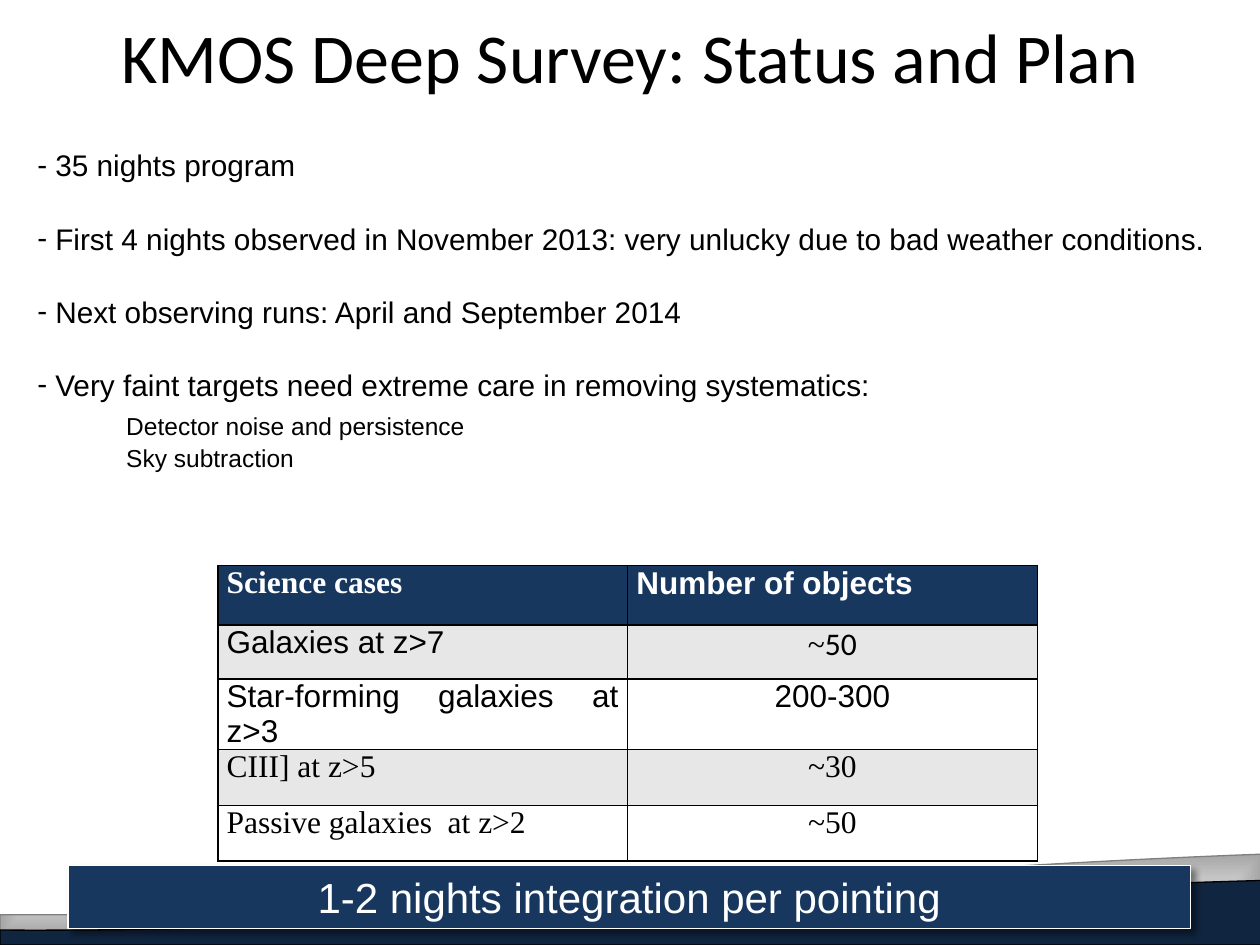
from dataclasses import dataclass

from lxml.etree import SubElement
from pptx import Presentation
from pptx.dml.color import RGBColor
from pptx.enum.shapes import MSO_SHAPE as Preset
from pptx.enum.text import MSO_ANCHOR as Anchor, MSO_AUTO_SIZE as AutoSize, PP_ALIGN as Align
from pptx.oxml.ns import qn
from pptx.util import Cm, Pt

NAVY, WHITE, BLACK, BAND = "17375E", "FFFFFF", "000000", "E7E7E7"
ARIAL, CALIBRI, TIMES = "Arial", "Calibri", "Times New Roman"
Point = tuple[float, float]


@dataclass
class Shadow:
    color: str
    opacity: int
    blur: float
    distance: float
    angle: int


@dataclass
class Wave:
    """Band at the slide foot: a curved upper edge above a flat base, in cm."""
    edge: tuple[Point, Point, Point, Point]
    base: float
    fills: tuple[str, ...]
    line: str


@dataclass
class ListItem:
    text: str
    space_before: float
    level: int = 0


@dataclass
class ScienceCase:
    label: str
    label_font: str
    label_align: Align
    count: tuple[tuple[str, str], ...]  # (text, font) runs
    count_align: Align = Align.CENTER


WAVE_SHADOW = Shadow("808080", 35, 3.1, 1.8, 90)
BAR_SHADOW = Shadow("000000", 43, 4, 3, 45)
WAVES = [
    Wave(((0, 18.44), (8.59, 18.49), (16.94, 17.53), (25.43, 17.22)), 18.85,
         ("DCDCDC", "A6A6A6"), "7F7F7F"),
    Wave(((0, 18.75), (8.59, 18.8), (16.94, 17.98), (25.43, 17.75)), 19.05,
         ("10253F",), BLACK),
]
ITEMS = [
    ListItem("35 nights program", 0),
    ListItem("First 4 nights observed in November 2013: very unlucky due to bad "
             "weather conditions.", 21.4),
    ListItem("Next observing runs: April and September 2014", 21.4),
    ListItem("Very faint targets need extreme care in removing systematics:", 21.4),
    ListItem("Detector noise and persistence", 5, level=1),
    ListItem("Sky subtraction", 1.5, level=1),
]
CASES = [
    ScienceCase("Science cases", TIMES, Align.LEFT,
                (("Number of objects", ARIAL),), Align.JUSTIFY),
    ScienceCase("Galaxies at z>7", ARIAL, Align.JUSTIFY, (("~", TIMES), ("50", CALIBRI))),
    ScienceCase("Star-forming galaxies at z>3", ARIAL, Align.JUSTIFY, (("200-300", ARIAL),)),
    ScienceCase("CIII] at z>5", TIMES, Align.JUSTIFY, (("~30", TIMES),)),
    ScienceCase("Passive galaxies  at z>2", TIMES, Align.JUSTIFY, (("~50", TIMES),)),
]
ROW_HEIGHTS = (1.2, 1.09, 1.12, 1.12, 1.12)


def rgb(color: str) -> RGBColor:
    return RGBColor.from_string(color)


def add_text(paragraph, text: str, *, size: float, font: str = ARIAL,
             color: str = BLACK, bold: bool = False, align: Align = Align.LEFT) -> None:
    paragraph.alignment = align
    run = paragraph.add_run()
    run.text = text
    run.font.size, run.font.name, run.font.bold = Pt(size), font, bold
    run.font.color.rgb = rgb(color)


def place(shape, left: float, top: float, width: float, height: float) -> None:
    shape.left, shape.top = Cm(left), Cm(top)
    shape.width, shape.height = Cm(width), Cm(height)


def set_solid(target, color: str) -> None:
    target.fill.solid()
    target.fill.fore_color.rgb = rgb(color)


def set_line(shape, color: str) -> None:
    shape.line.color.rgb = rgb(color)
    shape.line.width = Pt(0.75)


def set_shadow(shape, shadow: Shadow) -> None:
    shape.shadow.inherit = False
    effects = shape.element.spPr.find(qn("a:effectLst"))
    outer = SubElement(effects, qn("a:outerShdw"), blurRad=str(Pt(shadow.blur)),
                       dist=str(Pt(shadow.distance)), dir=str(shadow.angle * 60000),
                       rotWithShape="0")
    color = SubElement(outer, qn("a:srgbClr"), val=shadow.color)
    SubElement(color, qn("a:alpha"), val=str(shadow.opacity * 1000))


def set_rect_gradient(shape, colors: tuple[str, ...]) -> None:
    """Fill from the centre outwards."""
    shape.fill.gradient()
    for stop, color in zip(shape.fill.gradient_stops, colors):
        stop.color.rgb = rgb(color)
    gradient = shape.element.spPr.find(qn("a:gradFill"))
    gradient.remove(gradient.find(qn("a:lin")))
    rect = SubElement(gradient, qn("a:path"), path="rect")
    SubElement(rect, qn("a:fillToRect"), l="50000", t="50000", r="50000", b="50000")


def bezier(edge: tuple[Point, Point, Point, Point], steps: int = 40) -> list[Point]:
    points = []
    for step in range(steps + 1):
        t = step / steps
        weights = ((1 - t) ** 3, 3 * t * (1 - t) ** 2, 3 * t * t * (1 - t), t ** 3)
        points.append((sum(w * x for w, (x, _) in zip(weights, edge)),
                       sum(w * y for w, (_, y) in zip(weights, edge))))
    return points


def draw_wave(slide, wave: Wave) -> None:
    """Draw the band behind the title and everything after it."""
    points = [*bezier(wave.edge), (wave.edge[-1][0], wave.base), (0, wave.base)]
    start, *rest = [(Cm(x), Cm(y)) for x, y in points]
    builder = slide.shapes.build_freeform(*start)
    builder.add_line_segments(rest, close=True)
    shape = builder.convert_to_shape()
    if len(wave.fills) > 1:
        set_rect_gradient(shape, wave.fills)
    else:
        set_solid(shape, wave.fills[0])
    set_line(shape, wave.line)
    set_shadow(shape, WAVE_SHADOW)
    slide.shapes.title.element.addprevious(shape.element)


def draw_list(body, items: list[ListItem]) -> None:
    frame = body.text_frame
    frame.auto_size = AutoSize.NONE
    for index, item in enumerate(items):
        paragraph = frame.add_paragraph() if index else frame.paragraphs[0]
        paragraph.level = item.level
        paragraph.space_before = Pt(item.space_before)
        add_text(paragraph, item.text, size=14 if item.level else 17)
        margin, indent = (2.29, 0) if item.level else (0.86, -0.36)
        properties = paragraph._p.get_or_add_pPr()
        properties.set("marL", str(Cm(margin)))
        properties.set("indent", str(Cm(indent)))
        if item.level:
            SubElement(properties, qn("a:buNone"))
        else:
            SubElement(properties, qn("a:buFont"), typeface=ARIAL)
            SubElement(properties, qn("a:buChar"), char="-")


def format_cell(cell, fill: str) -> None:
    cell.margin_left = cell.margin_right = Cm(0.18)
    cell.margin_top = cell.margin_bottom = 0
    for side in ("lnL", "lnR", "lnT", "lnB"):
        border = SubElement(cell._tc.get_or_add_tcPr(), qn(f"a:{side}"), w=str(Pt(1)))
        SubElement(SubElement(border, qn("a:solidFill")), qn("a:srgbClr"), val=BLACK)
    set_solid(cell, fill)


def draw_table(slide, cases: list[ScienceCase]) -> None:
    table = slide.shapes.add_table(len(cases), 2, Cm(4.39), Cm(11.4), Cm(16.52),
                                   Cm(sum(ROW_HEIGHTS))).table
    for index, (case, height) in enumerate(zip(cases, ROW_HEIGHTS)):
        table.rows[index].height = Cm(height)
        header = index == 0
        fill = NAVY if header else BAND if index % 2 else WHITE
        columns = ((((case.label, case.label_font),), case.label_align),
                   (case.count, case.count_align))
        for column, (runs, align) in enumerate(columns):
            cell = table.cell(index, column)
            format_cell(cell, fill)
            for text, font in runs:
                add_text(cell.text_frame.paragraphs[0], text, size=18, font=font, bold=header,
                         color=WHITE if header else BLACK, align=align)


def draw_bar(slide, text: str) -> None:
    bar = slide.shapes.add_shape(Preset.RECTANGLE, Cm(1.37), Cm(17.45), Cm(22.63), Cm(1.27))
    set_solid(bar, NAVY)
    set_line(bar, WHITE)
    set_shadow(bar, BAR_SHADOW)
    bar.text_frame.word_wrap = True
    bar.text_frame.vertical_anchor = Anchor.MIDDLE
    add_text(bar.text_frame.paragraphs[0], text, size=24, color=WHITE, align=Align.CENTER)


def main() -> None:
    presentation = Presentation()
    presentation.slide_width, presentation.slide_height = Cm(25.4), Cm(19.05)
    slide = presentation.slides.add_slide(presentation.slide_layouts[1])
    title, body = slide.placeholders
    place(title, 1.7, 0.03, 22, 2.18)
    title.text_frame.vertical_anchor = Anchor.MIDDLE
    add_text(title.text_frame.paragraphs[0], "KMOS Deep Survey: Status and Plan",
             size=40, font=CALIBRI, align=Align.CENTER)
    place(body, 0, 2.84, 24.97, 6.71)
    draw_list(body, ITEMS)
    for wave in WAVES:
        draw_wave(slide, wave)
    draw_table(slide, CASES)
    draw_bar(slide, "1-2 nights integration per pointing")
    presentation.save("out.pptx")


if __name__ == "__main__":
    main()
